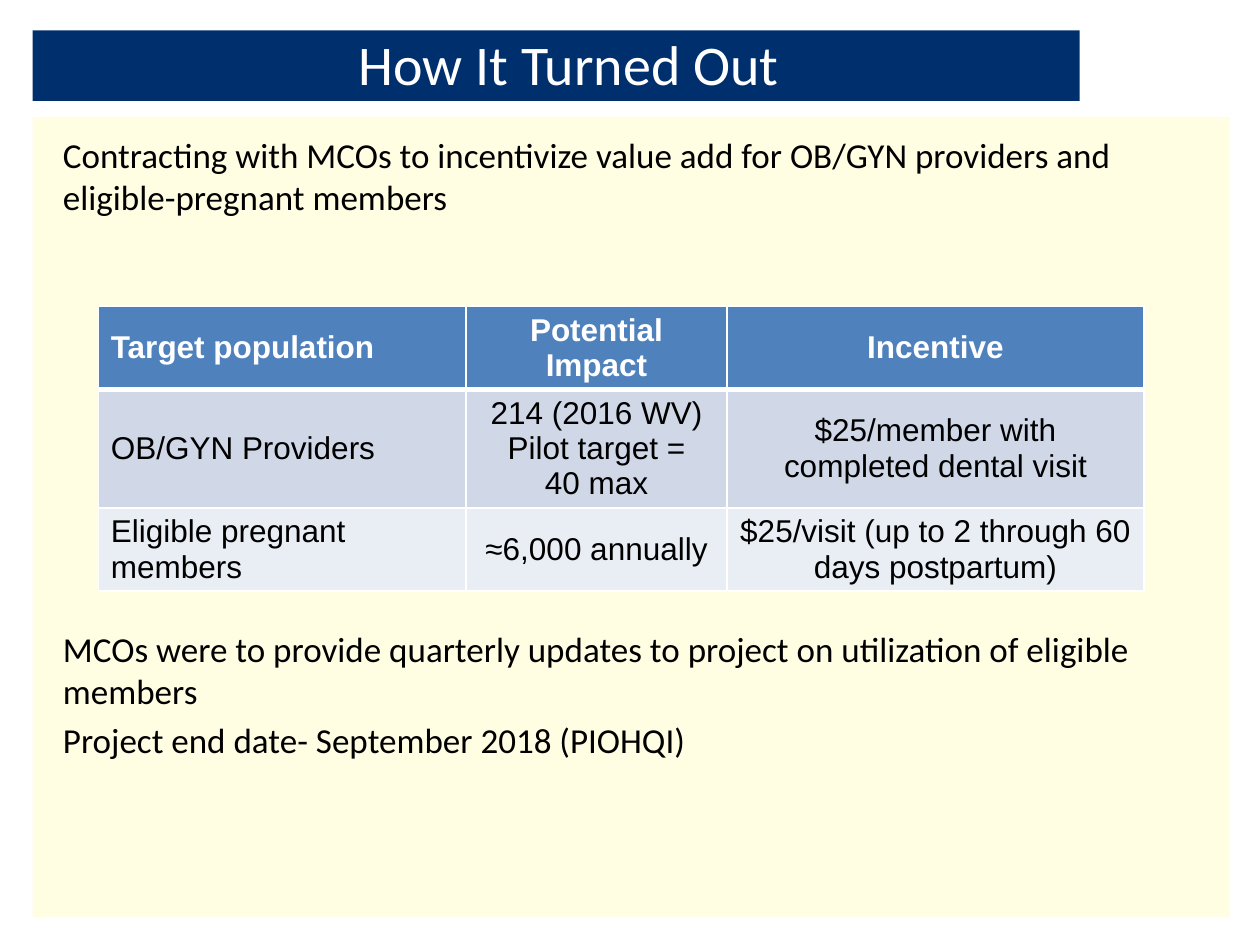
from dataclasses import dataclass
from typing import NamedTuple

from lxml import etree
from pptx import Presentation
from pptx import util as u
from pptx.dml.color import RGBColor
from pptx.enum import shapes, text
from pptx.oxml.ns import qn

SLIDE_W, SLIDE_H = u.Inches(10), u.Inches(7.5)


@dataclass(frozen=True)
class Theme:
    navy: str = "002F6D"
    cream: str = "FFFDE2"
    white: str = "FFFFFF"
    black: str = "000000"
    header: str = "4F81BD"
    bands: tuple = ("D0D8E8", "E9EDF4")
    heading_font: str = "Calibri"
    table_font: str = "Arial"
    title_size: int = 32
    body_size: int = 20
    table_size: int = 18


class Area(NamedTuple):
    """A rectangle in percent of the slide's width and height."""
    left: float
    top: float
    width: float
    height: float

    def lengths(self) -> tuple:
        return tuple(int(share * side / 100)
                     for share, side in zip(self, (SLIDE_W, SLIDE_H) * 2))


class Statement(NamedTuple):
    words: str
    space_before: int = 0


THEME = Theme()
PANEL = Area(2.6, 12.4, 95, 84.67)
TITLE_BAND = Area(2.6, 3.2, 83.1, 7.47)
TITLE = Area(5, 3.33, 80.3, 6.67)
BODY = Area(5, 14.13, 90, 75.73)
TABLE = Area(7.8, 32.4, 83, 29.87)
COLUMN_WIDTHS = (29.2, 20.7, 33.1)  # percent of slide width
ROW_HEIGHTS = (8.53, 12.53, 8.8)  # percent of slide height

STATEMENTS = (
    Statement("Contracting with MCOs to incentivize value add for OB/GYN "
              "providers and eligible-pregnant members"),
    # The wide gap leaves room for the table
    Statement("MCOs were to provide quarterly updates to project on "
              "utilization of eligible members", 234),
    Statement("Project end date- September 2018 (PIOHQI)", 4),
)
INCENTIVES = (
    ("Target population", "Potential Impact", "Incentive"),
    ("OB/GYN Providers", "214 (2016 WV)\nPilot target =\n40 max",
     "$25/member with completed dental visit"),
    ("Eligible pregnant members", "≈6,000 annually",
     "$25/visit (up to 2 through 60 days postpartum)"),
)


def style(paragraph, font: str, size: int, color: str,
          align=text.PP_ALIGN.LEFT, bold: bool = False) -> None:
    paragraph.alignment = align
    paragraph.font.name = font
    paragraph.font.size = u.Pt(size)
    paragraph.font.bold = bold
    paragraph.font.color.rgb = RGBColor.from_string(color)


def prepare_frame(frame, anchor) -> None:
    frame.word_wrap = True
    frame.auto_size = text.MSO_AUTO_SIZE.NONE
    frame.vertical_anchor = anchor
    frame.margin_left = frame.margin_right = 0
    frame.margin_top = frame.margin_bottom = 0


def add_block(slide, area: Area, color: str):
    block = slide.shapes.add_shape(shapes.MSO_SHAPE.RECTANGLE, *area.lengths())
    block.shadow.inherit = False
    block.fill.solid()
    block.fill.fore_color.rgb = RGBColor.from_string(color)
    block.line.fill.background()
    return block


def set_title(slide, words: str) -> None:
    title = slide.shapes.title
    title.left, title.top, title.width, title.height = TITLE.lengths()
    title.text_frame.text = words
    prepare_frame(title.text_frame, text.MSO_ANCHOR.MIDDLE)
    style(title.text_frame.paragraphs[0], THEME.heading_font,
          THEME.title_size, THEME.white, text.PP_ALIGN.CENTER)


def add_statements(slide) -> None:
    frame = slide.shapes.add_textbox(*BODY.lengths()).text_frame
    prepare_frame(frame, text.MSO_ANCHOR.TOP)
    frame.text = "\n".join(item.words for item in STATEMENTS)
    for paragraph, item in zip(frame.paragraphs, STATEMENTS):
        if item.space_before:
            paragraph.space_before = u.Pt(item.space_before)
        style(paragraph, THEME.heading_font, THEME.body_size, THEME.black)


def set_borders(cell, top: int, bottom: int) -> None:
    properties = cell._tc.get_or_add_tcPr()
    edges = (("a:lnL", 1), ("a:lnR", 1), ("a:lnT", top), ("a:lnB", bottom))
    for position, (tag, points) in enumerate(edges):
        line = etree.Element(qn(tag), w=str(u.Pt(points)))
        fill = etree.SubElement(line, qn("a:solidFill"))
        etree.SubElement(fill, qn("a:srgbClr"), val=THEME.white)
        properties.insert(position, line)


def add_incentive_table(slide) -> None:
    table = slide.shapes.add_table(len(INCENTIVES), len(COLUMN_WIDTHS),
                                   *TABLE.lengths()).table
    for column, share in zip(table.columns, COLUMN_WIDTHS):
        column.width = int(SLIDE_W * share / 100)
    for row, share in zip(table.rows, ROW_HEIGHTS):
        row.height = int(SLIDE_H * share / 100)
    for r, entries in enumerate(INCENTIVES):
        is_header = r == 0
        for c, words in enumerate(entries):
            cell = table.cell(r, c)
            cell.text = words
            cell.vertical_anchor = text.MSO_ANCHOR.MIDDLE
            cell.fill.solid()
            cell.fill.fore_color.rgb = RGBColor.from_string(
                THEME.header if is_header else THEME.bands[r - 1])
            set_borders(cell, 3 if r == 1 else 1, 3 if is_header else 1)
            for paragraph in cell.text_frame.paragraphs:
                style(paragraph, THEME.table_font, THEME.table_size,
                      THEME.white if is_header else THEME.black,
                      text.PP_ALIGN.CENTER if c else text.PP_ALIGN.LEFT,
                      is_header)


def main() -> None:
    deck = Presentation()
    deck.slide_width, deck.slide_height = SLIDE_W, SLIDE_H
    slide = deck.slides.add_slide(deck.slide_layouts.get_by_name("Title Only"))

    # Background panel and title band, placed behind the title
    title_element = slide.shapes.title._element
    for area, color in ((PANEL, THEME.cream), (TITLE_BAND, THEME.navy)):
        title_element.addprevious(add_block(slide, area, color)._element)

    # Content
    set_title(slide, "How It Turned Out")
    add_statements(slide)
    add_incentive_table(slide)
    deck.save("out.pptx")


if __name__ == "__main__":
    main()
